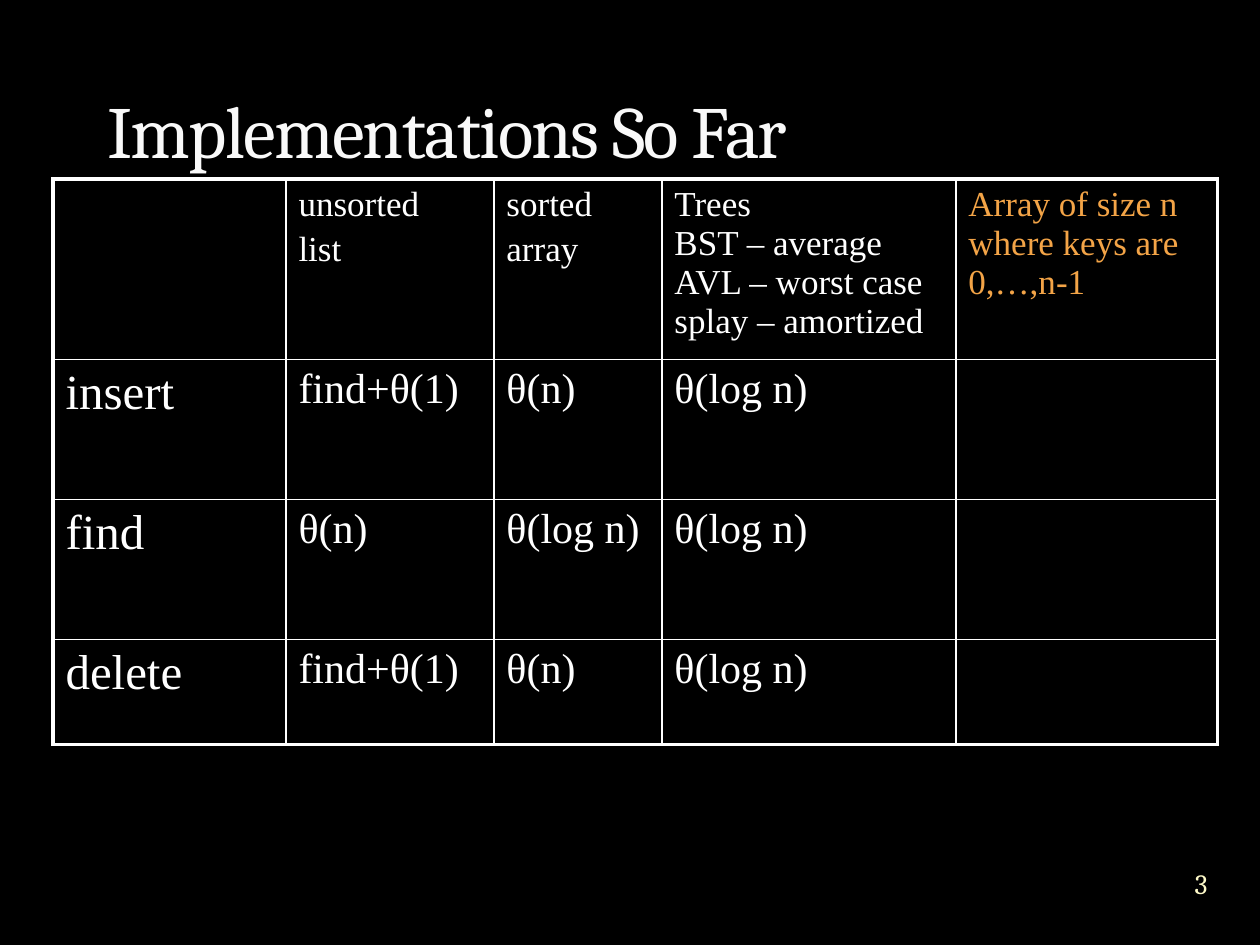
from lxml import etree
from pptx import Presentation
from pptx import util as u
from pptx.dml.color import RGBColor
from pptx.enum import text
from pptx.oxml import ns

PX = 914400 // 126
BLACK = RGBColor(0x00, 0x00, 0x00)
WHITE = RGBColor(0xFF, 0xFF, 0xFF)
OFF_WHITE = RGBColor(0xF9, 0xF9, 0xF9)
CREAM = RGBColor(0xFE, 0xFA, 0xC9)
ORANGE = RGBColor(0xF3, 0xA4, 0x47)

TITLE = {"name": "Cambria", "size": u.Pt(42), "color": OFF_WHITE}
NUMBER = {"name": "Cambria", "size": u.Pt(16), "color": CREAM}
HEADER = {"name": "Times New Roman", "size": u.Pt(20), "color": WHITE}
NEW_HEADER = {**HEADER, "color": ORANGE}
OPERATION = {**HEADER, "size": u.Pt(28)}
COST = {**HEADER, "size": u.Pt(24)}

COLUMNS = [233, 208, 168, 294, 262]
ROWS = [168, 140, 140, 105]
CELLS = [
    ["", "unsorted\nlist", "sorted\narray",
     "Trees\vBST – average\vAVL – worst case\vsplay – amortized",
     "Array of size n where keys are 0,…,n-1"],
    ["insert", "find+θ(1)", "θ(n)", "θ(log n)", ""],
    ["find", "θ(n)", "θ(log n)", "θ(log n)", ""],
    ["delete", "find+θ(1)", "θ(n)", "θ(log n)", ""],
]


def scaled(box):
    """Turn a box in px into EMU lengths."""
    return [u.Emu(length * PX) for length in box]


def style_run(run, style):
    """Apply a dict of font values to a run."""
    for name, value in style.items():
        if name == "color":
            run.font.color.rgb = value
        else:
            setattr(run.font, name, value)


def add_title(slide, box, words):
    """Place the title at the bottom of its box, with tightened letters."""
    frame = slide.shapes.add_textbox(*scaled(box)).text_frame
    frame.word_wrap = True
    frame.vertical_anchor = text.MSO_ANCHOR.BOTTOM
    run = frame.paragraphs[0].add_run()
    run.text = words
    style_run(run, TITLE)
    run.font._element.set("spc", "-100")


def add_slide_number(slide, box, number):
    """Centre the slide number in its box."""
    frame = slide.shapes.add_textbox(*scaled(box)).text_frame
    settings = {"word_wrap": True, "vertical_anchor": text.MSO_ANCHOR.MIDDLE,
                "margin_left": 0, "margin_right": 0,
                "margin_top": 0, "margin_bottom": 0}
    for name, value in settings.items():
        setattr(frame, name, value)
    paragraph = frame.paragraphs[0]
    paragraph.alignment = text.PP_ALIGN.CENTER
    run = paragraph.add_run()
    run.text = number
    style_run(run, NUMBER)


def set_borders(cell, outer_sides):
    """Draw white cell borders, thick on the outer sides."""
    properties = cell._tc.get_or_add_tcPr()
    for index, side in enumerate("LRTB"):
        width = u.Pt(2.25 if side in outer_sides else 1)
        line = etree.Element(ns.qn(f"a:ln{side}"), w=str(int(width)))
        fill = etree.SubElement(line, ns.qn("a:solidFill"))
        etree.SubElement(fill, ns.qn("a:srgbClr"), val=str(WHITE))
        properties.insert(index, line)


def cell_style(row, column):
    """Choose the font values by place in the table."""
    if row == 0:
        return NEW_HEADER if column == len(COLUMNS) - 1 else HEADER
    return OPERATION if column == 0 else COST


def fill_cell(cell, words, style):
    """Write the words of one cell on a black ground."""
    cell.fill.solid()
    cell.fill.fore_color.rgb = BLACK
    if not words:
        return
    cell.text_frame.text = words
    for paragraph in cell.text_frame.paragraphs:
        paragraph.space_before = u.Pt(3.5)
        for run in paragraph.runs:
            style_run(run, style)


def add_cost_table(slide, left, top):
    """Build the table of operation costs from its top left corner."""
    box = scaled([left, top, sum(COLUMNS), sum(ROWS)])
    table = slide.shapes.add_table(len(ROWS), len(COLUMNS), *box).table
    table.first_row = table.horz_banding = False
    for column, width in zip(table.columns, COLUMNS):
        column.width = u.Emu(width * PX)
    for row, height in zip(table.rows, ROWS):
        row.height = u.Emu(height * PX)
    for row, line in enumerate(CELLS):
        for column, words in enumerate(line):
            cell = table.cell(row, column)
            fill_cell(cell, words, cell_style(row, column))
            edges = {"L": column == 0, "R": column == len(COLUMNS) - 1,
                     "T": row == 0, "B": row == len(ROWS) - 1}
            set_borders(cell, [side for side in edges if edges[side]])


def main():
    """Build and save the slide."""
    presentation = Presentation()
    presentation.slide_width = u.Inches(10)
    presentation.slide_height = u.Inches(7.5)
    slide = presentation.slides.add_slide(presentation.slide_layouts[6])
    slide.background.fill.solid()
    slide.background.fill.fore_color.rgb = BLACK
    add_slide_number(slide, [1159, 852, 84, 63], "3")
    add_title(slide, [95, 21, 1071, 158], "Implementations So Far")
    add_cost_table(slide, 53, 179)
    presentation.save("out.pptx")


if __name__ == "__main__":
    main()
